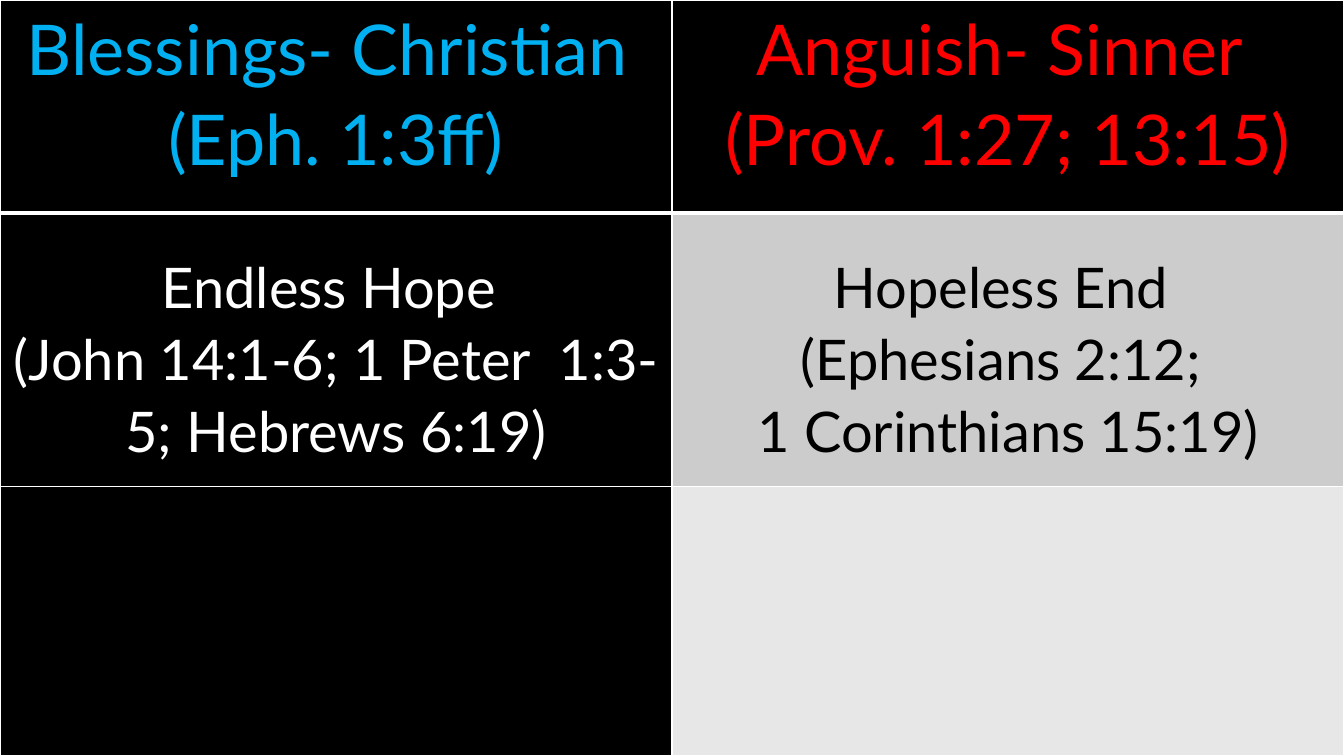
from pptx import Presentation
from pptx.dml.color import RGBColor
from pptx.enum.text import MSO_ANCHOR, PP_ALIGN
from pptx.oxml import parse_xml
from pptx.oxml.ns import nsdecls
from pptx.util import Pt

PX = 9525  # EMU in one px

THEME = {
    "font": "Lato",
    "black": "000000", "white": "FFFFFF", "blue": "00B0F0", "red": "FF0000",
    "gray": "CCCCCC", "pale": "E7E7E7",
    "head": 50, "body": 40,
}

# Each cell: fill, text colour, lines
ROWS = [
    [("black", "blue", ["Blessings- Christian ", "(Eph. 1:3ff)"]),
     ("black", "red", ["Anguish- Sinner ", "(Prov. 1:27; 13:15)"])],
    [("black", "white", ["Endless Hope ", "(John 14:1-6; 1 Peter  1:3-5; Hebrews 6:19)"]),
     ("gray", "black", ["Hopeless End ", "(Ephesians 2:12; ", "1 Corinthians 15:19)"])],
    [("black", "white", []), ("pale", "black", [])],
]
HIGH = [203, 260, 257]
TOPS = [0, 34, 0]
WIDE = 640


def color(name):
    return RGBColor.from_string(THEME[name])


def edge(cell, side, width):
    cell._tc.get_or_add_tcPr().append(parse_xml(
        f'<a:ln{side} {nsdecls("a")} w="{Pt(width)}"><a:solidFill>'
        f'<a:srgbClr val="{THEME["white"]}"/></a:solidFill></a:ln{side}>'))


# Slide
deck = Presentation()
deck.slide_width, deck.slide_height = 2 * WIDE * PX, sum(HIGH) * PX
slide = deck.slides.add_slide(deck.slide_layouts[6])
slide.background.fill.solid()
slide.background.fill.fore_color.rgb = color("black")

# Table grid
table = slide.shapes.add_table(
    len(ROWS), 2, 0, 0, deck.slide_width, deck.slide_height).table
table.first_row = table.horz_banding = False
for col in table.columns:
    col.width = WIDE * PX
for row, high in zip(table.rows, HIGH):
    row.height = high * PX

# Cells
for r, row in enumerate(ROWS):
    for c, (fill, ink, lines) in enumerate(row):
        cell = table.cell(r, c)
        cell.margin_left = cell.margin_right = 7 * PX
        cell.margin_top, cell.margin_bottom = TOPS[r] * PX, 0
        cell.vertical_anchor = MSO_ANCHOR.TOP

        # Borders, with a heavy rule under the header
        for side in "LRTB":
            heavy = (r, side) in [(0, "B"), (1, "T")]
            edge(cell, side, 3 if heavy else 1)
        cell.fill.solid()
        cell.fill.fore_color.rgb = color(fill)

        # Text
        cell.text = "\n".join(lines)
        for para in cell.text_frame.paragraphs:
            para.alignment = PP_ALIGN.CENTER
            para.line_spacing = 1.07
            para.font.name = THEME["font"]
            para.font.size = Pt(THEME["body" if r else "head"])
            para.font.bold = False
            para.font.color.rgb = color(ink)

deck.save("out.pptx")
